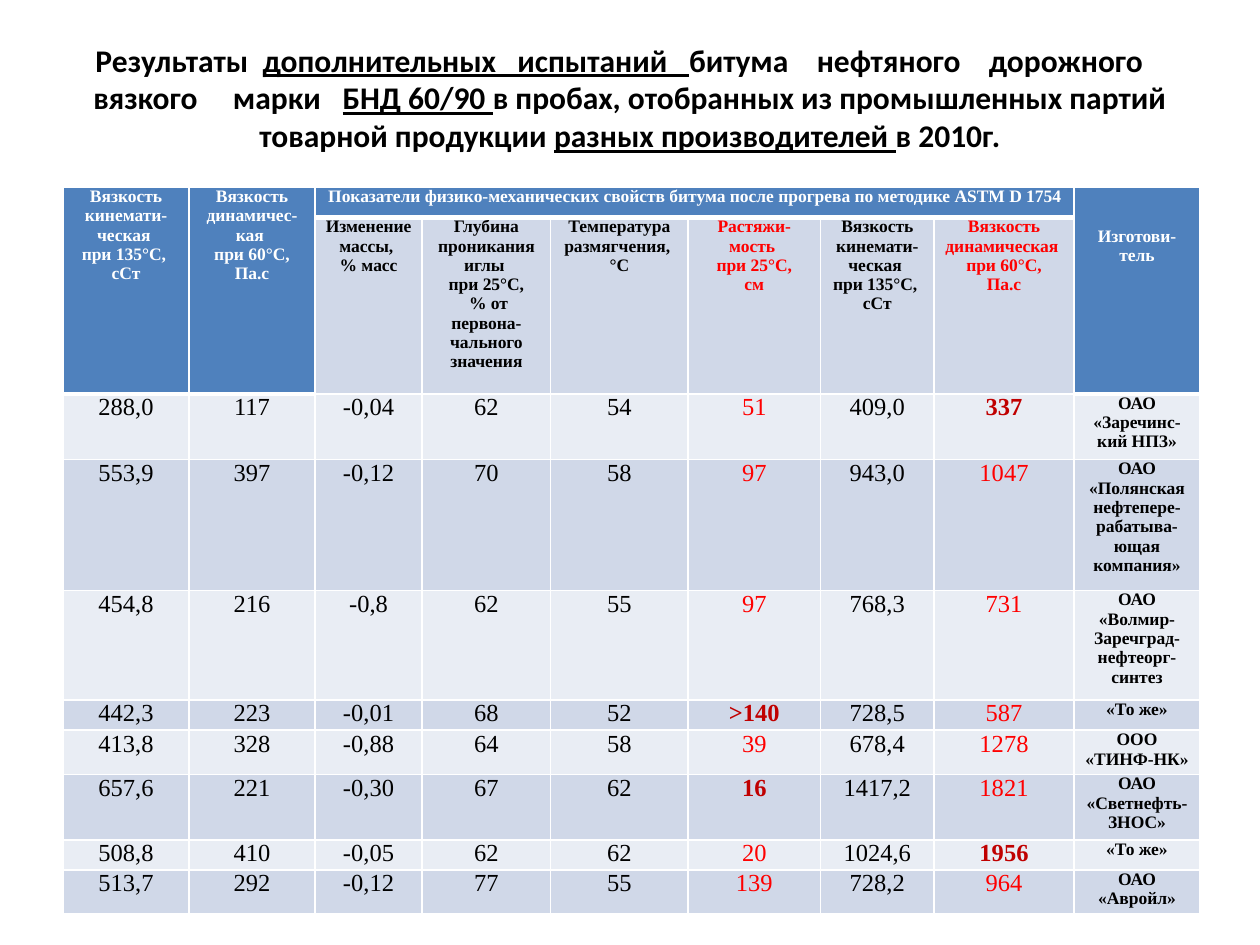
from lxml.etree import SubElement
from pptx import Presentation
from pptx.dml.color import RGBColor
from pptx.enum.text import MSO_ANCHOR, MSO_AUTO_SIZE, PP_ALIGN
from pptx.oxml.ns import qn
from pptx.util import Cm, Pt

COLORS = {
    "black": "000000", "white": "FFFFFF", "red": "FF0000", "dark red": "C00000",
    "header": "4F81BD", "dark band": "D0D8E8", "light band": "E9EDF4",
}

# Title runs: (wording, underlined)
TITLE = [
    ("Результаты  ", False),
    ("дополнительных   испытаний   ", True),
    ("битума    нефтяного    дорожного    вязкого     марки   ", False),
    ("БНД 60/90 ", True),
    ("в пробах, отобранных из промышленных партий товарной продукции ", False),
    ("разных производителей ", True),
    ("в 2010г.", False),
]

KINEMATIC = ["Вязкость кинемати-ческая ", "при 135°С, ", "сСт"]
GROUP = ["Показатели физико-механических свойств битума после прогрева "
         "по методике ASTM D 1754"]
MAKER = ["Изготови-тель"]

# Header cells that span rows or columns: (first row, first column, last row, last column, lines)
SPANNING_HEADERS = [
    (0, 0, 1, 0, KINEMATIC),
    (0, 1, 1, 1, ["Вязкость", "динамичес-кая ", "при 60°С,", "Па.с"]),
    (0, 2, 0, 7, GROUP),
    (0, 8, 1, 8, MAKER),
]
PROPERTIES = [
    ["Изменение ", "массы, ", "% масс"],
    ["Глубина проникания", "иглы ", "при 25°С,", " % от первона-чального значения"],
    ["Температура размягчения, ", "°С"],
    ["Растяжи-мость ", "при 25°С,", "см"],
    KINEMATIC,
    ["Вязкость", "динамическая ", "при 60°С,", "Па.с"],
]
SAMPLES = [
    ("288,0", "117", "-0,04", "62", "54", "51", "409,0", "337", "ОАО «Заречинс-кий НПЗ»"),
    ("553,9", "397", "-0,12", "70", "58", "97", "943,0", "1047",
     "ОАО «Полянская нефтепере-рабатыва-ющая компания»"),
    ("454,8", "216", "-0,8", "62", "55", "97", "768,3", "731",
     "ОАО «Волмир-Заречград-нефтеорг-синтез"),
    ("442,3", "223", "-0,01", "68", "52", ">140", "728,5", "587", "«То же»"),
    ("413,8", "328", "-0,88", "64", "58", "39", "678,4", "1278", "ООО «ТИНФ-НК»"),
    ("657,6", "221", "-0,30", "67", "62", "16", "1417,2", "1821", "ОАО «Светнефть-ЗНОС»"),
    ("508,8", "410", "-0,05", "62", "62", "20", "1024,6", "1956", "«То же»"),
    ("513,7", "292", "-0,12", "77", "55", "139", "728,2", "964", "ОАО «Авройл»"),
]
EXTREMES = {"337", ">140", "16", "1956"}
RED_COLUMNS = {5, 7}
MAKER_COLUMN = 8
PROPERTY_COLUMN = 2
HEADER_ROWS = 2

COLUMN_WIDTHS = [2.54, 2.54, 2.16, 2.59, 2.77, 2.67, 2.29, 2.82, 2.54]
ROW_HEIGHTS = [0.61, 3.56, 1.32, 2.64, 2.21, 0.61, 0.89, 1.32, 0.61, 0.89]


def rgb(color):
    return RGBColor.from_string(COLORS[color])


def add_run(paragraph, wording, font_name, size, color, bold):
    run = paragraph.add_run()
    run.text = wording
    run.font.name = font_name
    run.font.size = Pt(size)
    run.font.bold = bold
    run.font.color.rgb = rgb(color)
    return run


def write_cell(cell, lines, fill, color="black", size=10, bold=True):
    cell.fill.solid()
    cell.fill.fore_color.rgb = rgb(fill)
    for number, line in enumerate(lines):
        frame = cell.text_frame
        paragraph = frame.add_paragraph() if number else frame.paragraphs[0]
        paragraph.alignment = PP_ALIGN.CENTER
        add_run(paragraph, line, "Times New Roman", size, color, bold)


def rule_below(row, column):
    """Width in points of the line under a cell: heavy where a header cell ends."""
    spans_header = column < PROPERTY_COLUMN or column == MAKER_COLUMN
    return 3 if row == (1 if spans_header else 0) else 1


def set_borders(cell, row, column):
    properties = cell._tc.get_or_add_tcPr()
    widths = {"a:lnL": 1, "a:lnR": 1, "a:lnT": rule_below(row - 1, column),
              "a:lnB": rule_below(row, column)}
    for position, (side, width) in enumerate(widths.items()):
        line = SubElement(properties, qn(side), w=str(Pt(width)))
        fill = SubElement(line, qn("a:solidFill"))
        SubElement(fill, qn("a:srgbClr"), val=COLORS["white"])
        properties.insert(position, line)


def add_title(slide):
    title = slide.shapes.title
    title.left, title.top, title.width, title.height = Cm(1.27), Cm(0.76), Cm(22.86), Cm(3.18)
    frame = title.text_frame
    frame.word_wrap = True
    frame.auto_size = MSO_AUTO_SIZE.NONE
    frame.vertical_anchor = MSO_ANCHOR.MIDDLE
    frame.margin_bottom = Cm(0.9)
    paragraph = frame.paragraphs[0]
    paragraph.alignment = PP_ALIGN.CENTER
    for wording, underlined in TITLE:
        add_run(paragraph, wording, "Calibri", 18, "black", True).font.underline = underlined


def add_results(slide):
    table = slide.shapes.add_table(
        len(ROW_HEIGHTS), len(COLUMN_WIDTHS), Cm(1.27), Cm(3.77),
        Cm(sum(COLUMN_WIDTHS)), Cm(sum(ROW_HEIGHTS))).table
    for column, width in zip(table.columns, COLUMN_WIDTHS):
        column.width = Cm(width)
    for row, height in zip(table.rows, ROW_HEIGHTS):
        row.height = Cm(height)
    for row in range(len(ROW_HEIGHTS)):
        for column in range(len(COLUMN_WIDTHS)):
            cell = table.cell(row, column)
            cell.margin_left = cell.margin_right = Cm(0.18)
            cell.margin_top = cell.margin_bottom = Cm(0)
            set_borders(cell, row, column)

    for top, left, bottom, right, lines in SPANNING_HEADERS:
        cell = table.cell(top, left)
        cell.merge(table.cell(bottom, right))
        write_cell(cell, lines, "header", "white")
    table.cell(0, MAKER_COLUMN).margin_top = Cm(0.8)

    for column, lines in enumerate(PROPERTIES, PROPERTY_COLUMN):
        color = "red" if column in RED_COLUMNS else "black"
        write_cell(table.cell(1, column), lines, "dark band", color)

    for row, sample in enumerate(SAMPLES, HEADER_ROWS):
        band = "dark band" if row % 2 else "light band"
        for column, value in enumerate(sample):
            cell = table.cell(row, column)
            if column == MAKER_COLUMN:
                write_cell(cell, [value], band)
            elif column in RED_COLUMNS:
                extreme = value in EXTREMES
                write_cell(cell, [value], band, "dark red" if extreme else "red", 14, extreme)
            else:
                write_cell(cell, [value], band, size=14, bold=False)


def main():
    presentation = Presentation()
    presentation.slide_width, presentation.slide_height = Cm(25.4), Cm(19.05)
    slide = presentation.slides.add_slide(presentation.slide_layouts[5])
    add_title(slide)
    add_results(slide)
    presentation.save("out.pptx")


if __name__ == "__main__":
    main()
